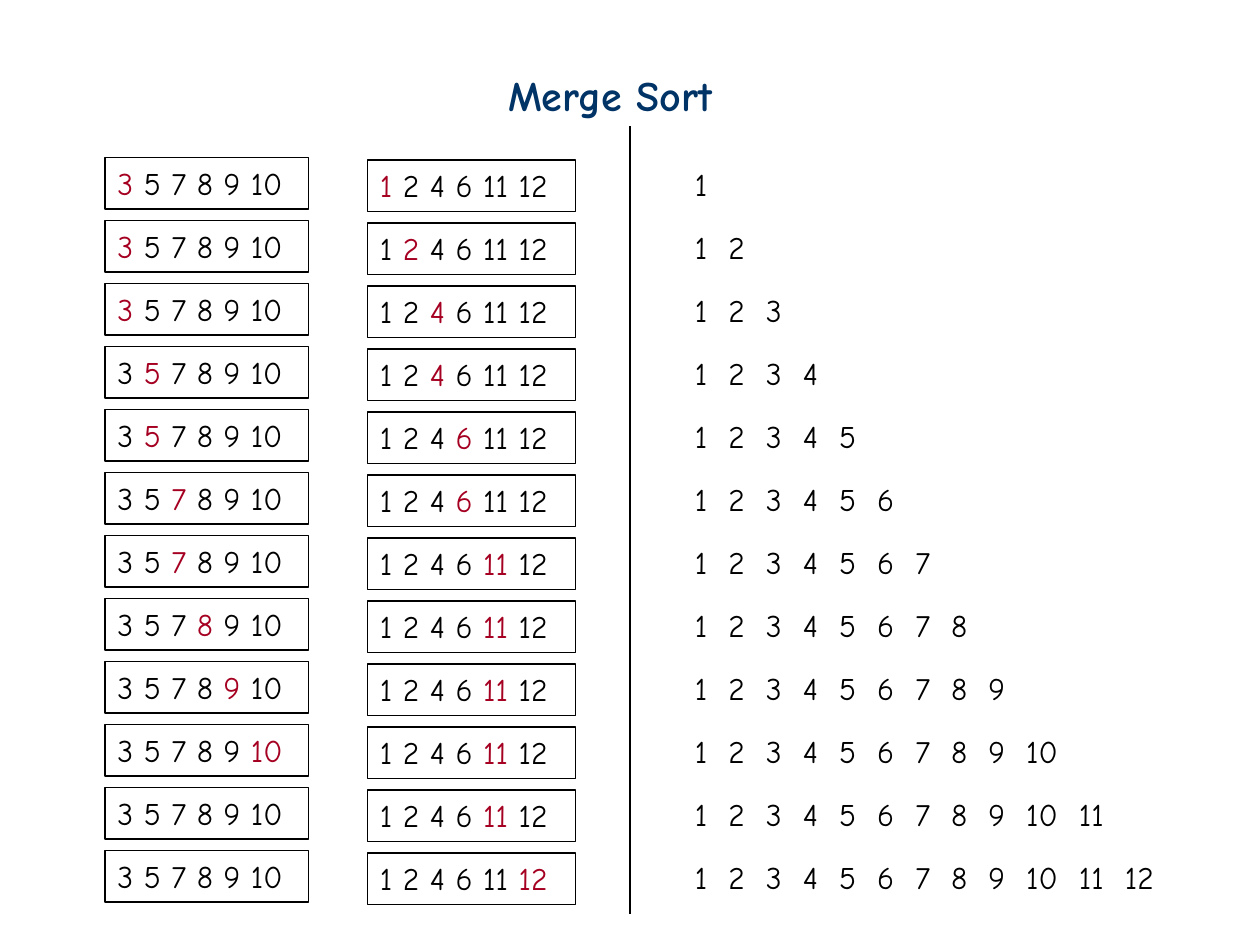
from pptx import Presentation
from pptx import util as u
from pptx.dml.color import RGBColor
from pptx.enum import shapes, text
from pptx.oxml import ns
from lxml import etree

FONT = "Comic Neue"
INK, HEAD, NAVY = "000000", "A50021", "003366"
WIDTH, HEIGHT = u.Inches(10), u.Inches(7.5)
COLUMN, ROW = WIDTH / 12, HEIGHT / 15
LEFT_LIST = [3, 5, 7, 8, 9, 10]
RIGHT_LIST = [1, 2, 4, 6, 11, 12]


def colour(hex_value):
    return RGBColor.from_string(hex_value)


def place(column, row, columns, rows):
    return [round(v) for v in (column * COLUMN, row * ROW, columns * COLUMN, rows * ROW)]


def write_runs(holder, runs, size=18, bold=False):
    frame = holder.text_frame
    frame.word_wrap = True
    frame.vertical_anchor = text.MSO_ANCHOR.TOP
    paragraph = frame.paragraphs[0]
    paragraph.alignment = text.PP_ALIGN.LEFT
    for words, ink in runs:
        run = paragraph.add_run()
        run.text = words
        run.font.name = FONT
        run.font.size = u.Pt(size)
        run.font.bold = bold
        run.font.color.rgb = colour(ink)


def add_label(slide, area, words, ink=INK, size=18, bold=False):
    label = slide.shapes.add_textbox(*area)
    write_runs(label, [(words, ink)], size, bold)


def add_list_box(slide, area, numbers, head):
    box = slide.shapes.add_shape(shapes.MSO_SHAPE.RECTANGLE, *area)
    box.shadow.inherit = False
    box.fill.background()
    box.line.color.rgb = colour(INK)
    box.line.width = u.Pt(0.75)
    before = "".join(f"{n} " for n in numbers[:head])
    current = "".join(str(n) for n in numbers[head:head + 1])
    after = "".join(f" {n}" for n in numbers[head + 1:])
    parts = [(before.rstrip() if not current else before, INK), (current, HEAD), (after, INK)]
    write_runs(box, [part for part in parts if part[0]])


def add_divider(slide, column, top_row, bottom_row):
    x = round(column * COLUMN)
    divider = slide.shapes.add_connector(
        shapes.MSO_CONNECTOR.STRAIGHT, x, round(top_row * ROW), x, round(bottom_row * ROW))
    divider.line.color.rgb = colour(INK)
    divider.line.width = u.Pt(0.75)
    etree.SubElement(divider._element.spPr, ns.qn("a:effectLst"))


def merge_steps(left, right):
    i = j = 0
    merged = []
    while i < len(left) or j < len(right):
        heads = i, j
        if j == len(right) or (i < len(left) and left[i] <= right[j]):
            merged.append(left[i])
            i += 1
        else:
            merged.append(right[j])
            j += 1
        yield heads, list(merged)


def main():
    deck = Presentation()
    deck.slide_width, deck.slide_height = WIDTH, HEIGHT
    slide = deck.slides.add_slide(deck.slide_layouts[6])

    add_label(slide, place(4.72, 1, 2.48, 1), "Merge Sort", NAVY, 24, True)
    add_divider(slide, 6, 2, 14.5)
    for step, (heads, merged) in enumerate(merge_steps(LEFT_LIST, RIGHT_LIST)):
        row = 2.5 + step
        add_list_box(slide, place(1, row, 1.94, 0.82), LEFT_LIST, heads[0])
        add_list_box(slide, place(3.5, row + 0.04, 1.98, 0.82), RIGHT_LIST, heads[1])
        add_label(slide, place(6.5, row + 0.02, 4.9, 0.8), "  ".join(map(str, merged)))

    deck.save("out.pptx")


if __name__ == "__main__":
    main()
